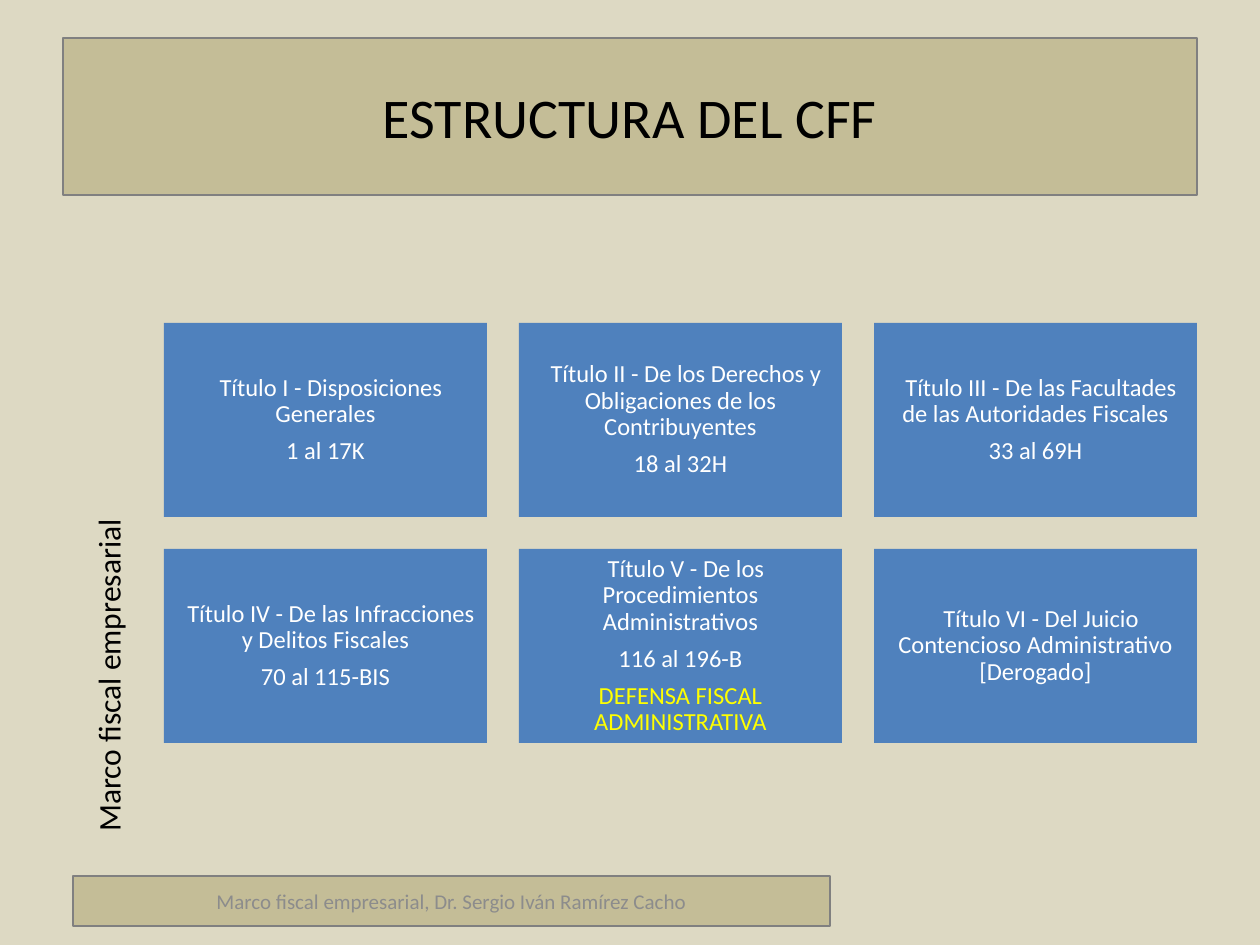
from dataclasses import dataclass

from pptx import Presentation
from pptx.dml.color import RGBColor
from pptx.enum.shapes import MSO_SHAPE
from pptx.enum.text import MSO_ANCHOR, PP_ALIGN
from pptx.util import Emu, Pt

RECT = MSO_SHAPE.RECTANGLE
MIDDLE = MSO_ANCHOR.MIDDLE
CENTER = PP_ALIGN.CENTER

SAND = RGBColor(0xDD, 0xD9, 0xC3)
KHAKI = RGBColor(0xC4, 0xBD, 0x97)
BLUE = RGBColor(0x4F, 0x81, 0xBD)
GRAY = RGBColor(0x80, 0x80, 0x80)
PALE = RGBColor(0x8C, 0x8C, 0x8C)
BLACK = RGBColor(0, 0, 0)
WHITE = RGBColor(0xFF, 0xFF, 0xFF)
YELLOW = RGBColor(0xFF, 0xFF, 0)

FONT = "Calibri"
DPI = 126
COLS = 3
LEFT, TOP = 164, 323
WIDE, HIGH = 323, 194
GAP = 32
INSET = 8


def px(n: int) -> Emu:
    return Emu(round(n * 914400 / DPI))


@dataclass
class Box:
    x: int
    y: int
    w: int
    h: int

    def frame(self) -> tuple[Emu, ...]:
        return px(self.x), px(self.y), px(self.w), px(self.h)


@dataclass
class Part:
    """One title of the code, with its articles and an optional remark."""
    name: str
    span: str = ""
    note: str = ""


PARTS = [
    Part("Título I - Disposiciones Generales", "1 al 17K"),
    Part("Título II - De los Derechos y Obligaciones de los Contribuyentes", "18 al 32H"),
    Part("Título III - De las Facultades de las Autoridades Fiscales", "33 al 69H"),
    Part("Título IV - De las Infracciones y Delitos Fiscales", "70 al 115-BIS"),
    Part("Título V - De los Procedimientos Administrativos", "116 al 196-B",
         "DEFENSA FISCAL ADMINISTRATIVA"),
    Part("Título VI - Del Juicio Contencioso Administrativo [Derogado]"),
]


def add_run(para, text: str, size: int, color: RGBColor) -> None:
    run = para.add_run()
    run.text = text
    run.font.name = FONT
    run.font.size = Pt(size)
    run.font.color.rgb = color


def add_rect(slide, box: Box, fill: RGBColor):
    shape = slide.shapes.add_shape(RECT, *box.frame())
    shape.shadow.inherit = False
    shape.fill.solid()
    shape.fill.fore_color.rgb = fill
    shape.line.fill.background()
    shape.text_frame.word_wrap = True
    shape.text_frame.vertical_anchor = MIDDLE
    return shape


def add_band(slide, box: Box, text: str, size: int, color: RGBColor) -> None:
    band = add_rect(slide, box, KHAKI)
    band.line.color.rgb = GRAY
    band.line.width = Pt(0.75)
    para = band.text_frame.paragraphs[0]
    para.alignment = CENTER
    add_run(para, text, size, color)


def add_side(slide, box: Box, text: str) -> None:
    """Add a label that reads upwards."""
    side = slide.shapes.add_textbox(*box.frame())
    side.rotation = 270
    side.text_frame.word_wrap = True
    add_run(side.text_frame.paragraphs[0], text, 18, BLACK)


def add_card(slide, box: Box, part: Part) -> None:
    frame = add_rect(slide, box, BLUE).text_frame
    frame.margin_left = frame.margin_right = px(INSET)
    frame.margin_top = frame.margin_bottom = px(INSET)
    lines = [(part.name, WHITE), (part.span, WHITE), (part.note, YELLOW)]
    for i, (text, color) in enumerate(lines):
        if not text:
            continue
        para = frame.add_paragraph() if i else frame.paragraphs[0]
        para.alignment = CENTER
        para.line_spacing = 0.9
        if i:
            para.space_before = Pt(6)
        else:
            props = para._p.get_or_add_pPr()
            props.set("marL", "0")
            props.set("indent", str(px(11)))
        add_run(para, text, 14, color)


def main() -> None:
    deck = Presentation()
    deck.slide_width, deck.slide_height = px(1260), px(945)
    slide = deck.slides.add_slide(deck.slide_layouts[6])
    slide.background.fill.solid()
    slide.background.fill.fore_color.rgb = SAND

    add_side(slide, Box(-204, 507, 624, 50), "Marco fiscal empresarial")
    add_band(slide, Box(63, 38, 1134, 157), "ESTRUCTURA DEL CFF", 32, BLACK)
    for i, part in enumerate(PARTS):
        row, col = divmod(i, COLS)
        box = Box(LEFT + col * (WIDE + GAP), TOP + row * (HIGH + GAP), WIDE, HIGH)
        add_card(slide, box, part)
    add_band(slide, Box(73, 876, 757, 50),
             "Marco fiscal empresarial, Dr. Sergio Iván Ramírez Cacho", 12, PALE)
    deck.save("out.pptx")


if __name__ == "__main__":
    main()
